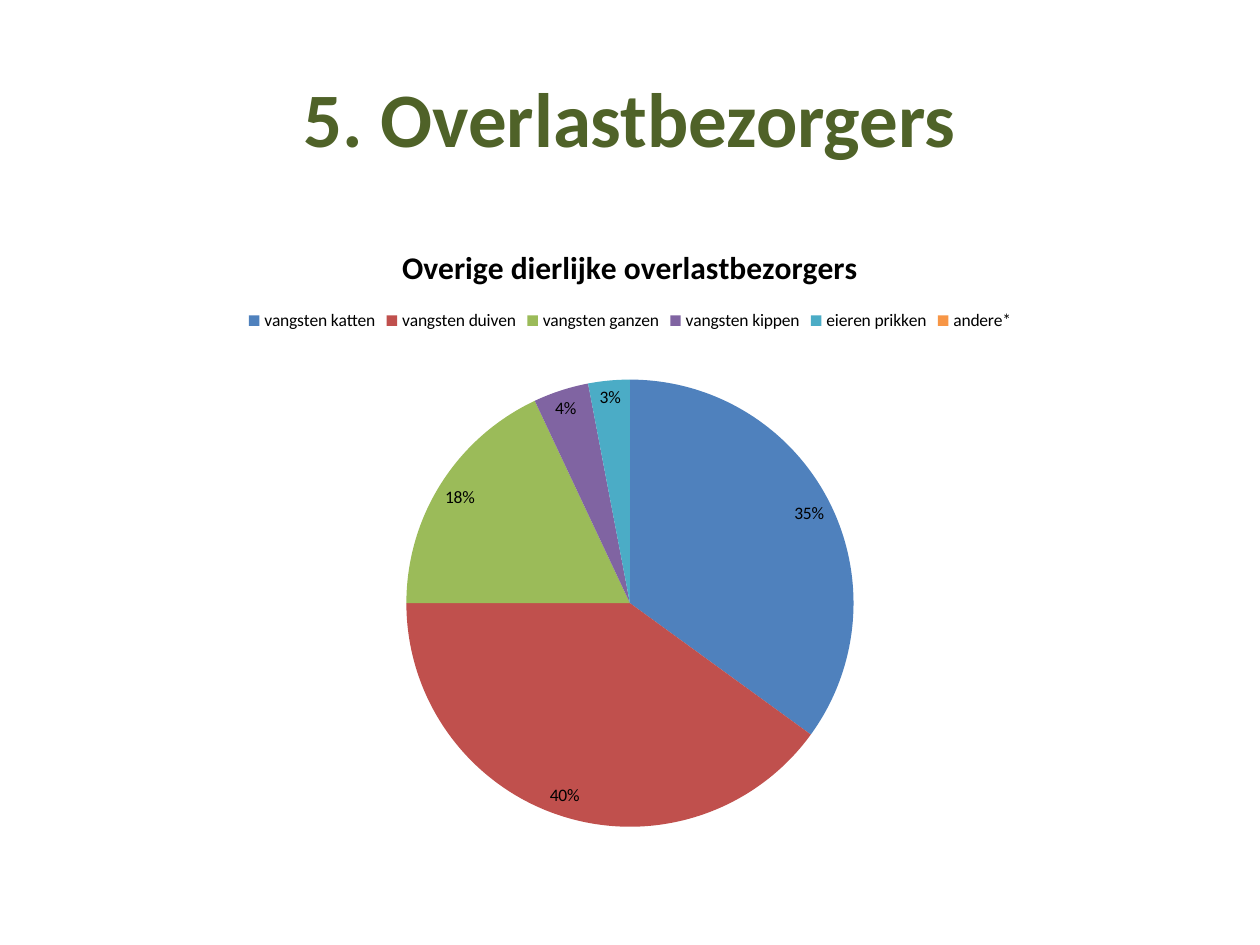
from pptx import Presentation
from pptx.chart.data import CategoryChartData
from pptx.dml.color import RGBColor
from pptx.enum import chart as charts, text
from pptx.util import Inches, Pt

FONT = "Calibri"
BLACK = RGBColor(0x00, 0x00, 0x00)
DARK_GREEN = RGBColor(0x4F, 0x62, 0x28)
CHART_TITLE = "Overige dierlijke overlastbezorgers"
SLICES = [
    ("vangsten katten", 35, RGBColor(0x4F, 0x81, 0xBD)),
    ("vangsten duiven", 40, RGBColor(0xC0, 0x50, 0x4D)),
    ("vangsten ganzen", 18, RGBColor(0x9B, 0xBB, 0x59)),
    ("vangsten kippen", 4, RGBColor(0x80, 0x64, 0xA2)),
    ("eieren prikken", 3, RGBColor(0x4B, 0xAC, 0xC6)),
    ("andere*", 0, RGBColor(0xF7, 0x96, 0x46)),
]


def style_font(font, size, color=BLACK, bold=False):
    """Set the typeface, size, colour and weight of a font."""
    font.name = FONT
    font.size = Pt(size)
    font.bold = bold
    font.color.rgb = color


def add_title(slide, wording):
    """Add the centred slide title."""
    box = slide.shapes.add_textbox(Inches(0.5), Inches(0.3), Inches(9), Inches(1.25))
    frame = box.text_frame
    frame.word_wrap = True
    frame.vertical_anchor = text.MSO_ANCHOR.MIDDLE
    paragraph = frame.paragraphs[0]
    paragraph.alignment = text.PP_ALIGN.CENTER
    run = paragraph.add_run()
    run.text = wording
    style_font(run.font, 44, DARK_GREEN, bold=True)


def add_pie(slide):
    """Add the pie chart with its title, legend and percentage labels."""
    names, values, colors = zip(*SLICES)
    data = CategoryChartData()
    data.categories = names
    data.add_series(CHART_TITLE, values)
    chart = slide.shapes.add_chart(
        charts.XL_CHART_TYPE.PIE,
        Inches(0.5), Inches(1.75), Inches(9), Inches(4.95), data,
    ).chart
    style_font(chart.font, 10)

    chart.has_title = True
    run = chart.chart_title.text_frame.paragraphs[0].add_run()
    run.text = CHART_TITLE
    style_font(run.font, 18, bold=True)

    chart.has_legend = True
    chart.legend.position = charts.XL_LEGEND_POSITION.TOP
    chart.legend.include_in_layout = False
    style_font(chart.legend.font, 10)

    plot = chart.plots[0]
    plot.vary_by_categories = True
    plot.has_data_labels = True
    labels = plot.data_labels
    labels.show_value = False
    labels.show_percentage = True
    labels.number_format = "0%"
    labels.number_format_is_linked = False
    labels.position = charts.XL_LABEL_POSITION.BEST_FIT
    style_font(labels.font, 10)

    for index, color in enumerate(colors):
        fill = plot.series[0].points[index].format.fill
        fill.solid()
        fill.fore_color.rgb = color


def main():
    """Build the slide and save the presentation."""
    presentation = Presentation()
    presentation.slide_width = Inches(10)
    presentation.slide_height = Inches(7.5)
    slide = presentation.slides.add_slide(presentation.slide_layouts[6])
    add_title(slide, "5. Overlastbezorgers")
    add_pie(slide)
    presentation.save("out.pptx")


if __name__ == "__main__":
    main()
